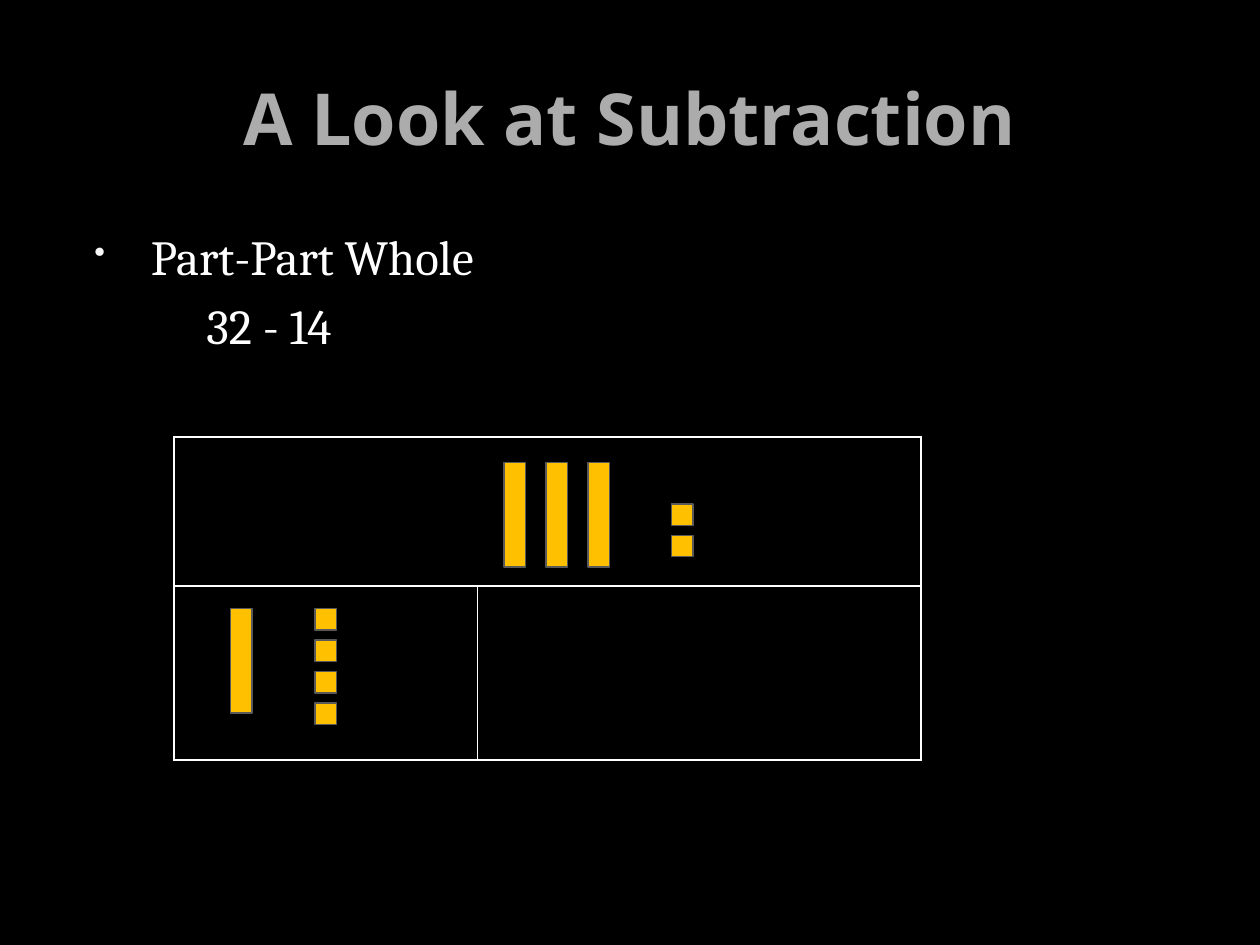
from lxml.etree import SubElement
from pptx import Presentation
from pptx.dml.color import RGBColor
from pptx.enum.shapes import MSO_SHAPE as SHAPE
from pptx.enum.text import MSO_ANCHOR as ANCHOR, PP_ALIGN as ALIGN
from pptx.oxml import parse_xml
from pptx.oxml.ns import nsdecls, qn
from pptx.util import Inches, Pt

TITLE = "A Look at Subtraction"
TITLE_FONT = {"name": "Open Sans", "size": Pt(41), "bold": True}
BODY_FONT = {"name": "Cambria", "size": Pt(28)}
BODY = [
    {"text": "Part-Part Whole", "left": 0.6, "indent": -0.45, "bullet": "•"},
    {"text": "32 - 14", "left": 1.04, "indent": 0, "bullet": None},
]
TABLE_AT = (1.38, 3.47)
COLUMNS = [2.41, 3.52]
ROWS = [1.18, 1.38]
UNIT, ROD = 0.17, 0.83
ROD_STEP, UNIT_STEP = 1 / 3, 0.25
BLOCKS = [
    {"rods": 3, "rods_at": (4, 3.67), "units": 2, "units_at": (5.33, 4)},
    {"rods": 1, "rods_at": (1.83, 4.83), "units": 4, "units_at": (2.5, 4.83)},
]


def color(value):
    return RGBColor.from_string(value)


def add_text(p, text, font, value):
    r = p.add_run()
    r.text = text
    for name, setting in font.items():
        setattr(r.font, name, setting)
    r.font.color.rgb = color(value)


def place(sp, *box):
    for name, value in zip(("left", "top", "width", "height"), box):
        setattr(sp, name, Inches(value))


def format_paragraph(p, left, indent, bullet):
    p.space_before = Pt(5.6)
    pPr = p._p.get_or_add_pPr()
    pPr.set("marL", str(Inches(left)))
    pPr.set("indent", str(Inches(indent)))
    if bullet:
        clr = SubElement(pPr, qn("a:buClr"))
        SubElement(clr, qn("a:srgbClr"), val="F9F9F9")
        SubElement(pPr, qn("a:buSzPct"), val="65000")
        SubElement(pPr, qn("a:buChar"), char=bullet)


def format_cell(cell):
    cell.fill.background()
    tcPr = cell._tc.get_or_add_tcPr()
    for i, side in enumerate(("lnL", "lnR", "lnT", "lnB")):
        tcPr.insert(i, parse_xml(
            f'<a:{side} {nsdecls("a")} w="{Pt(1)}"><a:solidFill>'
            f'<a:srgbClr val="FFFFFF"/></a:solidFill></a:{side}>'))


def add_block(s, x, y, height):
    sp = s.shapes.add_shape(SHAPE.RECTANGLE, *map(Inches, (x, y, UNIT, height)))
    sp.shadow.inherit = False
    sp.fill.solid()
    sp.fill.fore_color.rgb = color("FFC000")
    sp.line.color.rgb = color("595959")
    sp.line.width = Pt(0.75)


def main():
    prs = Presentation()
    prs.slide_width, prs.slide_height = Inches(10), Inches(7.5)
    s = prs.slides.add_slide(prs.slide_layouts[5])
    s.background.fill.solid()
    s.background.fill.fore_color.rgb = color("000000")

    title = s.shapes.title
    place(title, 0.5, 0.3, 9, 1.25)
    title.text_frame.vertical_anchor = ANCHOR.MIDDLE
    p = title.text_frame.paragraphs[0]
    p.alignment = ALIGN.CENTER
    add_text(p, TITLE, TITLE_FONT, "ACACAC")

    tf = s.shapes.add_textbox(*map(Inches, (0.5, 1.75, 9, 5.15))).text_frame
    tf.word_wrap = True
    for i, item in enumerate(BODY):
        p = tf.add_paragraph() if i else tf.paragraphs[0]
        format_paragraph(p, item["left"], item["indent"], item["bullet"])
        add_text(p, item["text"], BODY_FONT, "FFFFFF")

    size = (sum(COLUMNS), sum(ROWS))
    table = s.shapes.add_table(len(ROWS), len(COLUMNS),
                               *map(Inches, TABLE_AT + size)).table
    table.first_row = table.horz_banding = False
    for column, width in zip(table.columns, COLUMNS):
        column.width = Inches(width)
    for row, height in zip(table.rows, ROWS):
        row.height = Inches(height)
    table.cell(0, 0).merge(table.cell(0, 1))
    for cell in table.iter_cells():
        format_cell(cell)

    for group in BLOCKS:
        x, y = group["rods_at"]
        for i in range(group["rods"]):
            add_block(s, x + i * ROD_STEP, y, ROD)
        x, y = group["units_at"]
        for i in range(group["units"]):
            add_block(s, x, y + i * UNIT_STEP, UNIT)

    prs.save("out.pptx")


if __name__ == "__main__":
    main()
